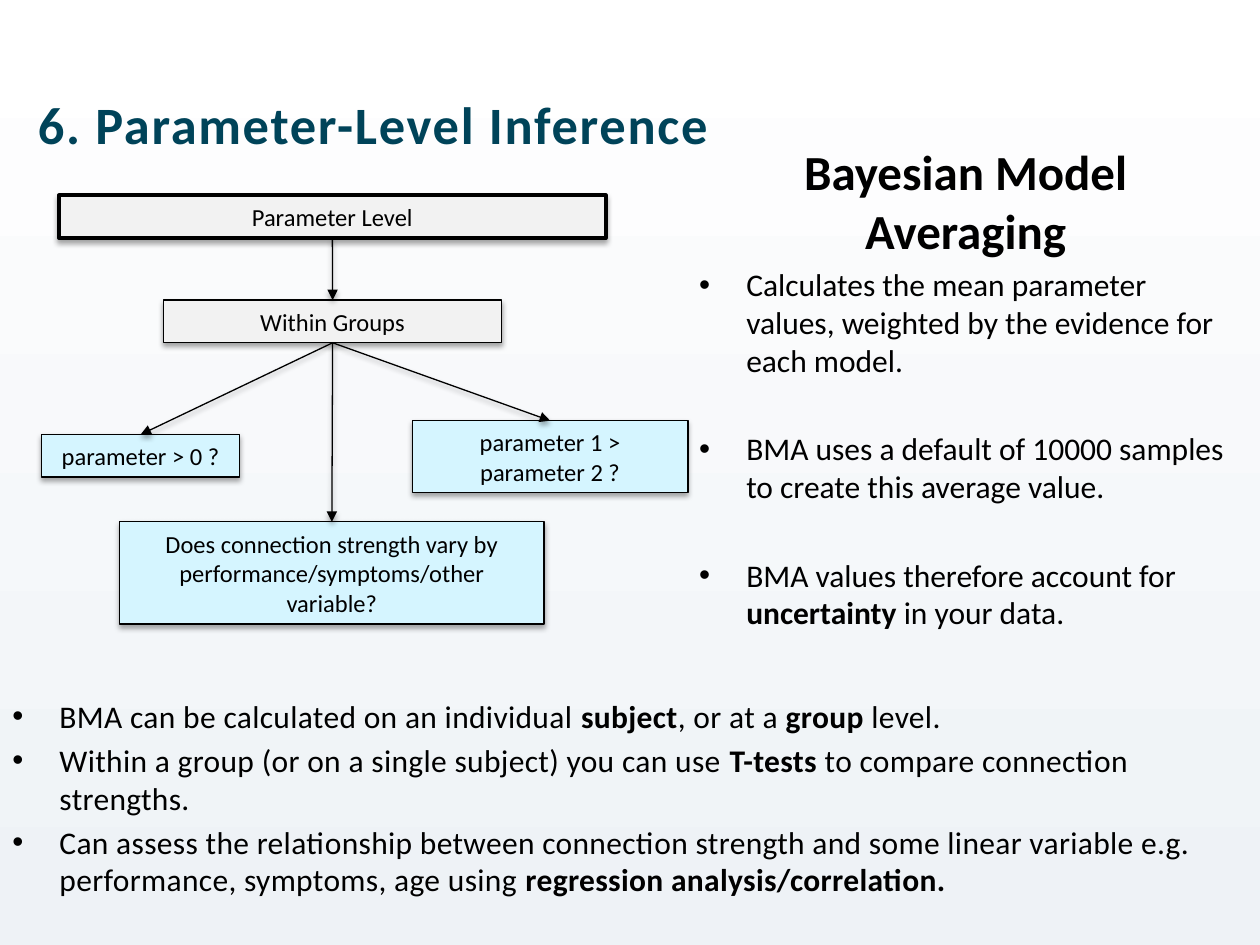
import pptx
import pptx.util
import pptx.dml.color
import pptx.enum.shapes
import pptx.enum.text
import pptx.oxml.ns
import lxml.etree

Cm = pptx.util.Cm
Pt = pptx.util.Pt
RGB = pptx.dml.color.RGBColor.from_string
ALIGN = pptx.enum.text.PP_ALIGN
ANCHOR = pptx.enum.text.MSO_ANCHOR
qn = pptx.oxml.ns.qn
sub = lxml.etree.SubElement

COLORS = {
    "title": "004359",
    "text": "000000",
    "level": "F2F2F2",
    "question": "D5F5FF",
    "bg_top": "FFFFFF",
    "bg_bottom": "EEF2F6",
}


def write(p, text, size=18, color="text", bold=False, spacing=0,
          align=ALIGN.LEFT, before=0, bullet=False):
    p.alignment = align
    p.space_before = Pt(before)
    pPr = p._p.get_or_add_pPr()
    pPr.set("marL", str(Cm(0.95) if bullet else 0))
    pPr.set("indent", str(-Cm(0.95) if bullet else 0))
    if bullet:
        sub(pPr, qn("a:buFont")).set("typeface", "Arial")
        sub(pPr, qn("a:buChar")).set("char", "•")
    else:
        sub(pPr, qn("a:buNone"))
    for i, part in enumerate(text.split("*")):
        r = p.add_run()
        r.text = part
        r.font.name = "Calibri"
        r.font.size = Pt(size)
        r.font.bold = bold or i % 2 == 1
        r.font.color.rgb = RGB(COLORS[color])
        if spacing:
            r._r.get_or_add_rPr().set("spc", str(round(spacing * 100)))


def add_shadow(sp):
    effects = sub(sp._element.spPr, qn("a:effectLst"))
    outer = sub(effects, qn("a:outerShdw"), blurRad=str(Pt(3.1)),
                dist=str(Pt(1.8)), dir="5400000", rotWithShape="0")
    clr = sub(outer, qn("a:srgbClr"), val=COLORS["text"])
    sub(clr, qn("a:alpha"), val="35000")


prs = pptx.Presentation()
prs.slide_width = Cm(25.4)
prs.slide_height = Cm(19.05)
s = prs.slides.add_slide(prs.slide_layouts[1])

fill = s.background.fill
fill.gradient()
fill.gradient_angle = 270
for stop, position, name in zip(fill.gradient_stops, (0, 1), ("bg_top", "bg_bottom")):
    stop.position = position
    stop.color.rgb = RGB(COLORS[name])

title = s.shapes.title
body = s.placeholders[1]
notes_box = s.shapes.add_textbox(0, 0, 0, 0)
for sp, box in (
    (title, (0.51, 1.73, 23.57, 3.61)),
    (body, (13.84, 2.72, 11.25, 12.4)),
    (notes_box, (0, 13.92, 24.79, 4.6)),
):
    sp.left, sp.top, sp.width, sp.height = [Cm(v) for v in box]
    tf = sp.text_frame
    tf.word_wrap = True
    tf.auto_size = pptx.enum.text.MSO_AUTO_SIZE.NONE
    tf.vertical_anchor = ANCHOR.TOP

write(title.text_frame.paragraphs[0], "6. Parameter-Level Inference",
      size=30, color="title", bold=True, spacing=1)

tf = body.text_frame
write(tf.paragraphs[0], "Bayesian Model Averaging", size=28, bold=True, align=ALIGN.CENTER)
for text, before in (
    ("Calculates the mean parameter values, weighted by the evidence for each model.", 3.6),
    ("BMA uses a default of 10000 samples to create this average value.", 29),
    ("BMA values therefore account for *uncertainty* in your data.", 29),
):
    write(tf.add_paragraph(), text, before=before, bullet=True)

tf = notes_box.text_frame
for i, text in enumerate((
    "BMA can be calculated on an individual *subject*, or at a *group* level.",
    "Within a group (or on a single subject) you can use *T-tests* to compare connection strengths.",
    "Can assess the relationship between connection strength and some linear variable e.g. "
    "performance, symptoms, age using *regression analysis/correlation.*",
)):
    p = tf.add_paragraph() if i else tf.paragraphs[0]
    write(p, text, spacing=0.2, before=3.6 if i else 0, bullet=True)

nodes = {}
for key, text, box, color, weight in (
    ("level", "Parameter Level", (1.19, 3.94, 11.02, 0.86), "level", 2.25),
    ("within", "Within Groups", (3.3, 6.05, 6.81, 0.86), "level", 0.75),
    ("zero", "parameter > 0 ?", (0.84, 8.76, 3.99, 0.86), "question", 0.75),
    ("compare", "parameter 1 > parameter 2 ?", (8.31, 8.48, 5.56, 1.45), "question", 0.75),
    ("vary", "Does connection strength vary by performance/symptoms/other variable?",
     (2.41, 10.52, 8.56, 2.06), "question", 0.75),
):
    sp = s.shapes.add_shape(pptx.enum.shapes.MSO_SHAPE.RECTANGLE, *[Cm(v) for v in box])
    sp.fill.solid()
    sp.fill.fore_color.rgb = RGB(COLORS[color])
    sp.line.color.rgb = RGB(COLORS["text"])
    sp.line.width = Pt(weight)
    add_shadow(sp)
    tf = sp.text_frame
    tf.word_wrap = True
    tf.vertical_anchor = ANCHOR.MIDDLE
    write(tf.paragraphs[0], text, size=14, align=ALIGN.CENTER)
    nodes[key] = sp

for start, end in (("level", "within"), ("within", "zero"),
                   ("within", "compare"), ("within", "vary")):
    line = s.shapes.add_connector(pptx.enum.shapes.MSO_CONNECTOR.STRAIGHT, 0, 0, 0, 0)
    line.begin_connect(nodes[start], 2)
    line.end_connect(nodes[end], 0)
    line.line.color.rgb = RGB(COLORS["text"])
    line.line.width = Pt(0.75)
    sub(line._element.spPr.find(qn("a:ln")), qn("a:tailEnd"), type="triangle")
    add_shadow(line)

prs.save("out.pptx")
